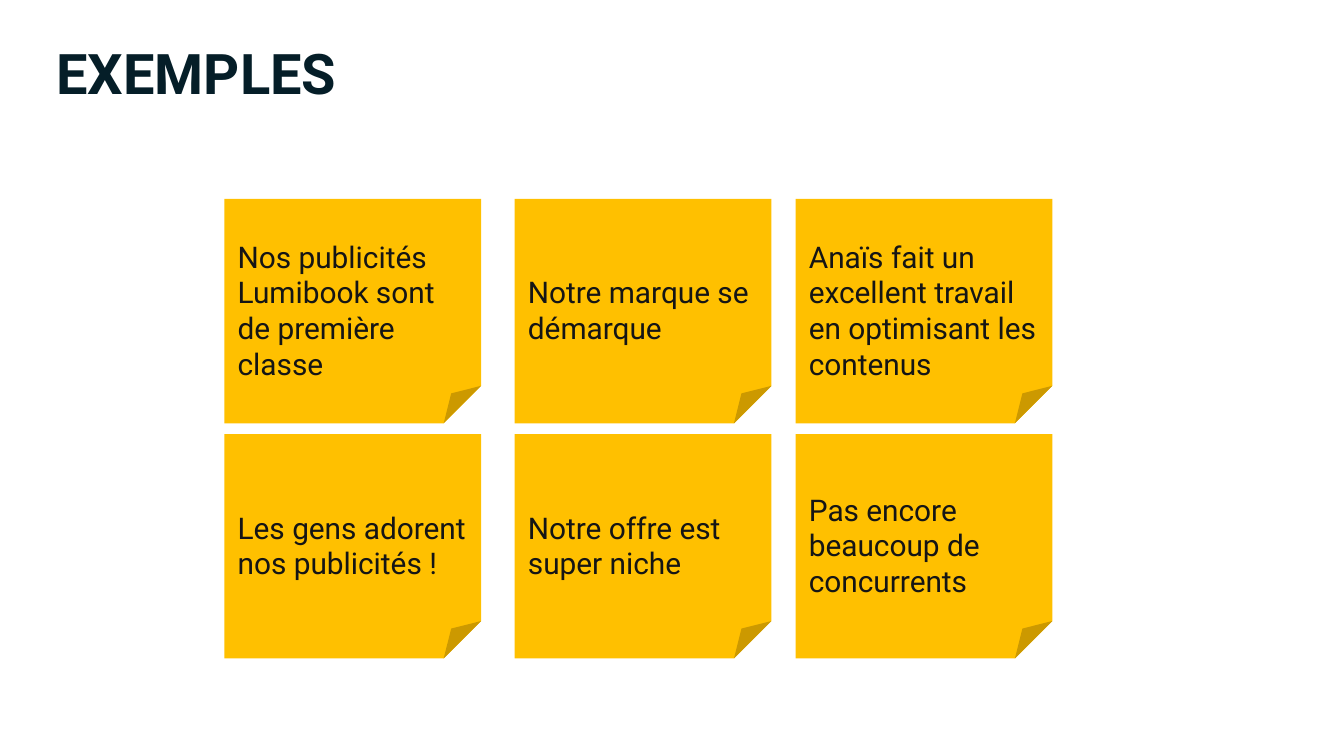
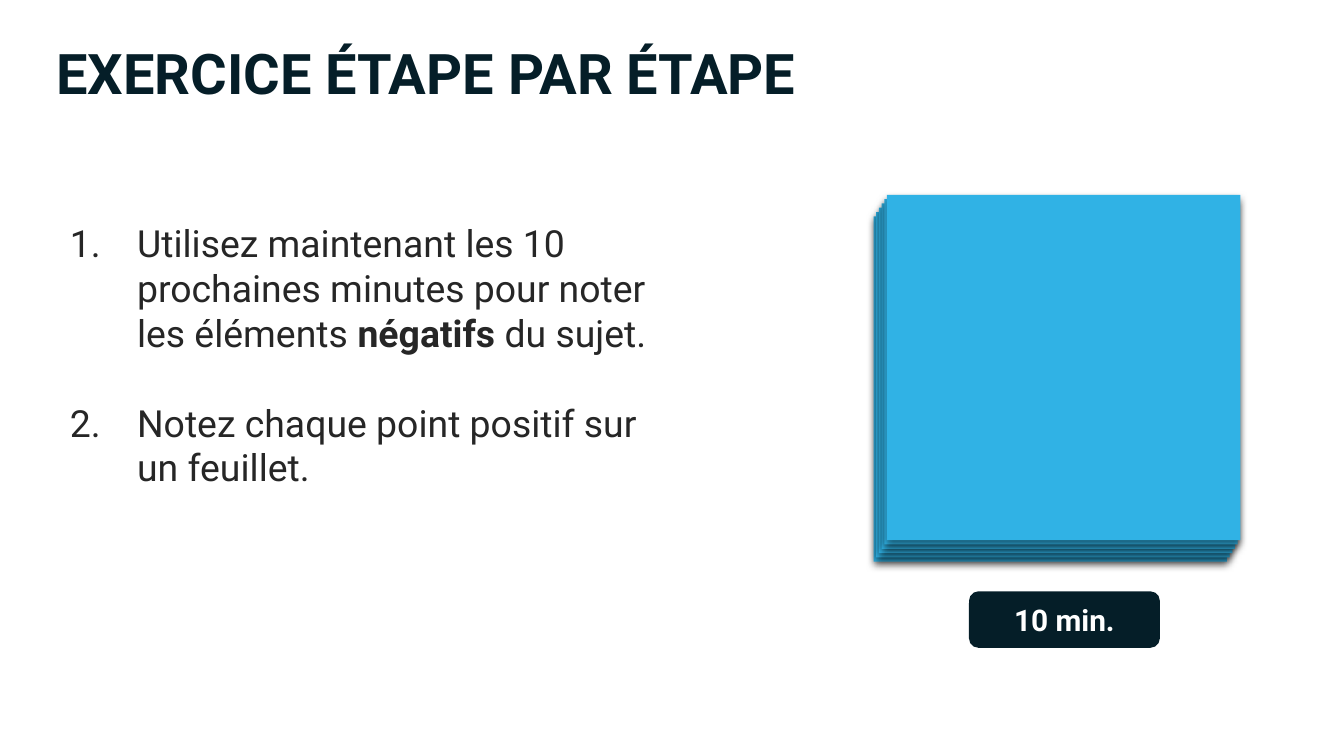
from itertools import product

from lxml import etree
from pptx import Presentation
from pptx.dml.color import RGBColor
from pptx.enum import shapes, text
from pptx.oxml import ns
from pptx.util import Inches, Pt

COLORS = {
    "navy": "051E28",
    "yellow": "FFC000",
    "blue": "30B2E5",
    "ink": "151515",
    "body": "262626",
    "white": "FFFFFF",
    "black": "000000",
}
FONT = "Roboto"
SLIDE_WIDTH = Inches(10)
SLIDE_HEIGHT = SLIDE_WIDTH * 9 // 16

EXAMPLES_TITLE = "EXEMPLES"
EXAMPLES = [
    "Nos publicités Lumibook sont de première classe",
    "Notre marque se démarque",
    "Anaïs fait un excellent travail en optimisant les contenus",
    "Les gens adorent nos publicités !",
    "Notre offre est super niche",
    "Pas encore beaucoup de concurrents",
]
NOTE_ROWS = [1.48, 3.23]
NOTE_COLUMNS = [1.67, 3.83, 5.92]
NOTE_SIZE = (1.91, 1.67)

EXERCISE_TITLE = "EXERCICE ÉTAPE PAR ÉTAPE"
STEPS = [
    [
        ("Utilisez maintenant les 10 prochaines minutes pour noter les éléments ", False),
        ("négatifs", True),
        (" du sujet.", False),
    ],
    [("Notez chaque point positif sur un feuillet.", False)],
]
DURATION = "10 min."
PAD_SHEETS = 6
PAD_START = (6.5, 1.61)
PAD_SHIFT = (0.1, -0.16)
PAD_SIZE = (2.63, 2.57)


def color(name):
    return RGBColor.from_string(COLORS[name])


def style(font, size, ink, bold=False):
    font.name = FONT
    font.size = Pt(size)
    font.bold = bold
    font.color.rgb = color(ink)


def place(part, left, top, width, height):
    part.left, part.top = Inches(left), Inches(top)
    part.width, part.height = Inches(width), Inches(height)


def add_filled(parent, preset, left, top, size, fill):
    part = parent.add_shape(preset, *map(Inches, (left, top, *size)))
    part.shadow.inherit = False
    part.fill.solid()
    part.fill.fore_color.rgb = color(fill)
    part.line.fill.background()
    return part


def write(part, words, size, ink, align, bold=False):
    frame = part.text_frame
    frame.word_wrap = True
    frame.vertical_anchor = text.MSO_ANCHOR.MIDDLE
    frame.text = words
    paragraph = frame.paragraphs[0]
    paragraph.alignment = align
    style(paragraph.runs[0].font, size, ink, bold)
    return frame


def add_titled_slide(deck, layout, words):
    slide = deck.slides.add_slide(deck.slide_layouts[layout])
    title = slide.shapes.title
    place(title, 0.42, 0.31, 9.15, 0.45)
    frame = write(title, words, 30, "navy", text.PP_ALIGN.LEFT, True)
    frame.auto_size = text.MSO_AUTO_SIZE.NONE
    frame.margin_left = frame.margin_right = 0
    frame.margin_top = frame.margin_bottom = 0
    return slide


def cast_shadow(part):
    effects = part.element.spPr.find(ns.qn("a:effectLst"))
    shadow = etree.SubElement(
        effects, ns.qn("a:outerShdw"),
        blurRad=str(Pt(4)), dist=str(Pt(2)), dir="5400000", algn="t", rotWithShape="0",
    )
    tint = etree.SubElement(shadow, ns.qn("a:srgbClr"), val=COLORS["black"])
    etree.SubElement(tint, ns.qn("a:alpha"), val="50000")


def number(paragraph):
    properties = paragraph._p.get_or_add_pPr()
    properties.set("marL", str(Inches(0.5)))
    properties.set("indent", str(-Inches(0.5)))
    etree.SubElement(properties, ns.qn("a:buFont"), typeface="+mj-lt")
    etree.SubElement(properties, ns.qn("a:buAutoNum"), type="arabicPeriod")


def build_examples(deck):
    slide = add_titled_slide(deck, 5, EXAMPLES_TITLE)
    for words, (top, left) in zip(EXAMPLES, product(NOTE_ROWS, NOTE_COLUMNS)):
        note = add_filled(slide.shapes, shapes.MSO_SHAPE.FOLDED_CORNER,
                          left, top, NOTE_SIZE, "yellow")
        frame = write(note, words, 16, "ink", text.PP_ALIGN.LEFT)
        frame.margin_top = Inches(0.31)


def build_exercise(deck):
    slide = add_titled_slide(deck, 1, EXERCISE_TITLE)

    steps = slide.placeholders[1]
    place(steps, 0.42, 1.59, 4.58, 2.12)
    frame = steps.text_frame
    frame.word_wrap = True
    frame.auto_size = text.MSO_AUTO_SIZE.NONE
    frame.vertical_anchor = text.MSO_ANCHOR.TOP
    for index, pieces in enumerate(STEPS):
        paragraph = frame.add_paragraph() if index else frame.paragraphs[0]
        number(paragraph)
        paragraph.space_before = Pt(24 if index else 0)
        style(paragraph.font, 20, "body")
        for words, bold in pieces:
            run = paragraph.add_run()
            run.text = words
            style(run.font, 20, "body", bold)

    pad = slide.shapes.add_group_shape()
    for index in range(PAD_SHEETS):
        share = index / (PAD_SHEETS - 1)
        left, top = (start + shift * share for start, shift in zip(PAD_START, PAD_SHIFT))
        sheet = add_filled(pad.shapes, shapes.MSO_SHAPE.RECTANGLE, left, top, PAD_SIZE, "blue")
        cast_shadow(sheet)

    timer = add_filled(slide.shapes, shapes.MSO_SHAPE.ROUNDED_RECTANGLE,
                       7.21, 4.4, (1.42, 0.42), "navy")
    write(timer, DURATION, 16, "white", text.PP_ALIGN.CENTER, True)


def main():
    deck = Presentation()
    deck.slide_width, deck.slide_height = SLIDE_WIDTH, SLIDE_HEIGHT
    build_examples(deck)
    build_exercise(deck)
    deck.save("out.pptx")


if __name__ == "__main__":
    main()
